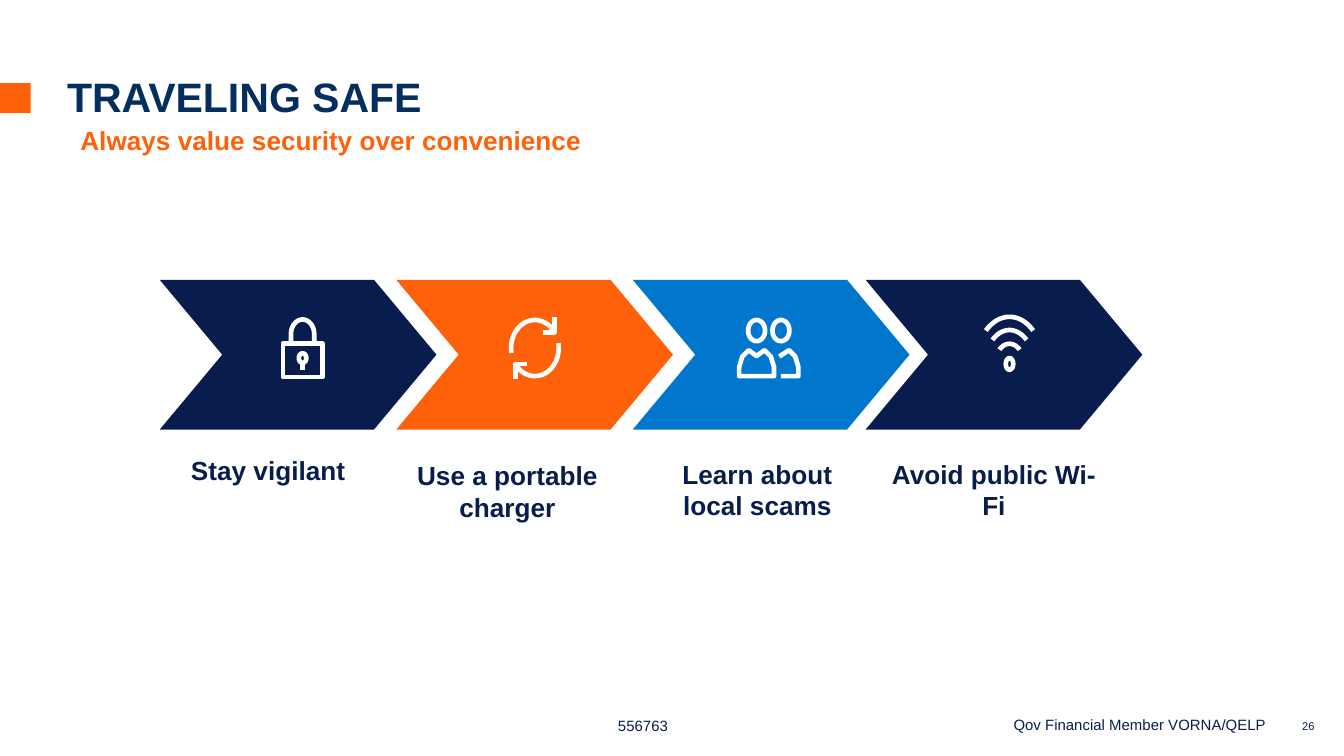
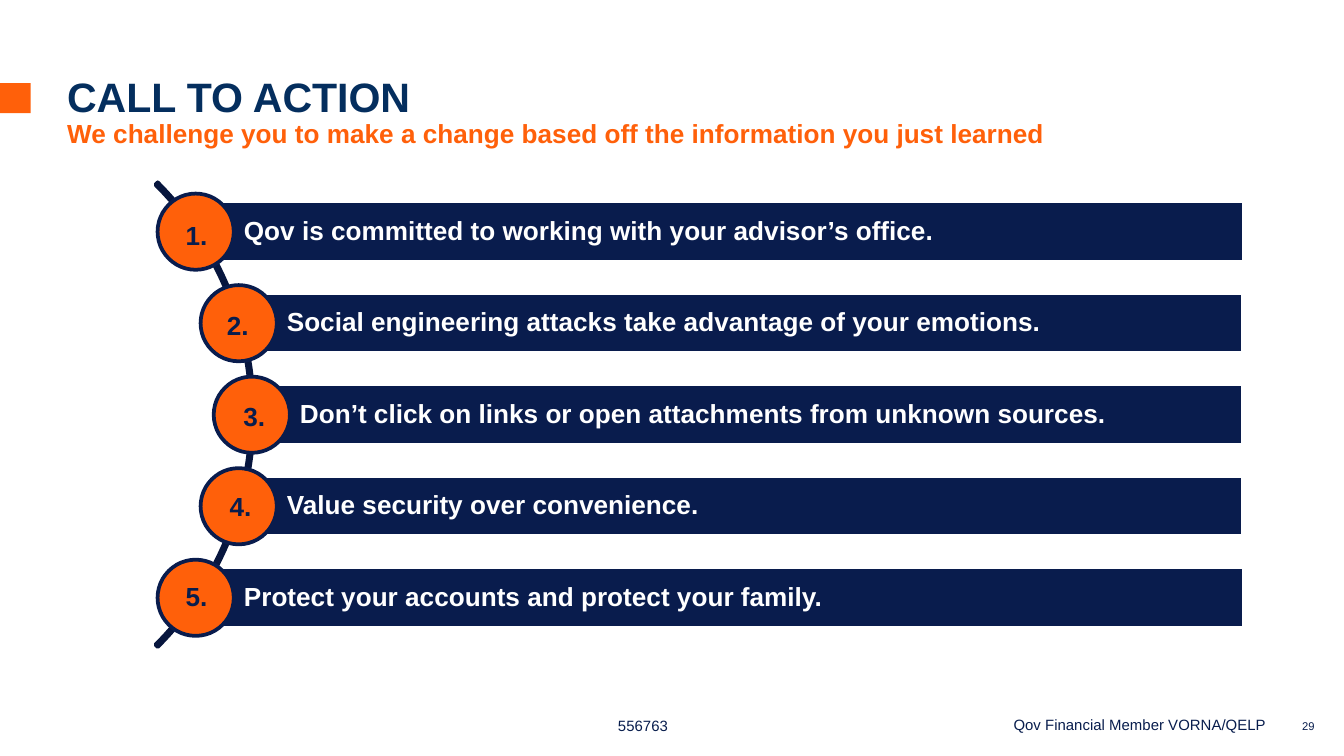
import math

import pptx
import pptx.dml.color
import pptx.enum.shapes
import pptx.enum.text
import pptx.util
from pptx.util import Cm

RGBColor = pptx.dml.color.RGBColor
Shape = pptx.enum.shapes.MSO_SHAPE
Align = pptx.enum.text.PP_ALIGN
Anchor = pptx.enum.text.MSO_ANCHOR

NAVY = RGBColor(0x08, 0x1D, 0x4D)
BAR_NAVY = RGBColor(0x09, 0x1C, 0x4D)
ARC_NAVY = RGBColor(0x07, 0x16, 0x3E)
TITLE_NAVY = RGBColor(0x04, 0x2E, 0x5E)
ORANGE = RGBColor(0xFF, 0x60, 0x0A)
BLUE = RGBColor(0x00, 0x77, 0xCD)
WHITE = RGBColor(0xFF, 0xFF, 0xFF)
FONT = "Arial"


def write_text(shape, text, size=14, color=NAVY, bold=True, align=Align.LEFT,
               anchor=Anchor.TOP, insets=(0, 0, 0, 0), line_spacing=None):
    """Fill a shape with one paragraph; insets are left, top, right, bottom in cm."""
    frame = shape.text_frame
    frame.word_wrap = True
    frame.vertical_anchor = anchor
    (frame.margin_left, frame.margin_top,
     frame.margin_right, frame.margin_bottom) = map(Cm, insets)
    paragraph = frame.paragraphs[0]
    paragraph.alignment = align
    paragraph.line_spacing = line_spacing
    run = paragraph.add_run()
    run.text = text
    run.font.name = FONT
    run.font.size = pptx.util.Pt(size)
    run.font.bold = bold
    run.font.color.rgb = color


def arc(center_x, center_y, radius_x, radius_y, start=0, end=360):
    """Points along an ellipse; degrees run clockwise from the right."""
    steps = 32
    angles = [math.radians(start + (end - start) * i / steps) for i in range(steps + 1)]
    return [(center_x + radius_x * math.cos(a), center_y + radius_y * math.sin(a))
            for a in angles]


def lock_icon():
    return [
        [(-0.37, -0.09), (0.37, -0.09), (0.37, 0.55), (-0.37, 0.55), (-0.37, -0.09)],
        [(-0.22, -0.09), *arc(0, -0.26, 0.22, 0.28, 180, 360), (0.22, -0.09)],
        arc(0, 0.19, 0.07, 0.09),
        [(0, 0.28), (0, 0.41)],
    ]


def cycle_icon():
    upper = [arc(0, 0, 0.45, 0.53, 170, 320),
             [(0.15, -0.3), (0.37, -0.3), (0.37, -0.58)]]
    lower = [[(-x, -y) for x, y in stroke] for stroke in upper]
    return upper + lower


def people_icon():
    heads = [arc(x, -0.33, 0.16, 0.2) for x in (-0.23, 0.23)]
    front = [(-0.56, 0.53), (-0.56, 0.36), (-0.5, 0.16), (-0.38, 0.04), (-0.23, 0.15),
             (-0.08, 0.04), (0.04, 0.16), (0.1, 0.36), (0.1, 0.53), (-0.56, 0.53)]
    back = [(0.23, 0.53), (0.56, 0.53), (0.56, 0.36), (0.5, 0.16), (0.38, 0.04),
            (0.2, 0.16)]
    return heads + [front, back]


def wifi_icon():
    waves = [arc(0, 0, 0.71 * height, height, 225, 315) for height in (0.38, 0.64, 0.89)]
    return waves + [arc(0, 0, 0.07, 0.11)]


class Deck:
    """Holds the shared style and the slide being built; all lengths are in cm."""

    def __init__(self):
        self.presentation = pptx.Presentation()
        self.presentation.slide_width = Cm(25.4)
        self.presentation.slide_height = Cm(14.29)
        self.slide = None

    def add_slide(self, title, subtitle, subtitle_left, subtitle_top, number):
        self.slide = self.presentation.slides.add_slide(
            self.presentation.slide_layouts[6])
        self.shape(Shape.RECTANGLE, 0, 1.57, 0.58, 0.57, fill=ORANGE)
        self.text(title, 1.27, 1.27, 22.35, 1.02, size=22, color=TITLE_NAVY,
                  anchor=Anchor.BOTTOM, line_spacing=0.9)
        self.text(subtitle, subtitle_left, subtitle_top, 22.1, 0.8, color=ORANGE,
                  line_spacing=pptx.util.Pt(22))
        footer = dict(bold=False, anchor=Anchor.BOTTOM)
        self.text("556763", 11.68, 12.8, 7.34, 1.09, size=8, **footer)
        self.text("Qov Financial Member VORNA/QELP", 15.32, 13.54, 8.61, 0.33,
                  size=8, align=Align.RIGHT, **footer)
        self.text(str(number), 24.61, 13.61, 0.48, 0.25, size=6, **footer)

    def text(self, text, left, top, width, height, **style):
        box = self.slide.shapes.add_textbox(Cm(left), Cm(top), Cm(width), Cm(height))
        write_text(box, text, **style)

    def paint(self, shape, fill=None, line=None, line_width=2):
        shape.shadow.inherit = False
        if fill is None:
            shape.fill.background()
        else:
            shape.fill.solid()
            shape.fill.fore_color.rgb = fill
        if line is None:
            shape.line.fill.background()
        else:
            shape.line.color.rgb = line
            shape.line.width = pptx.util.Pt(line_width)

    def shape(self, kind, left, top, width, height, adjustments=(), **paint):
        shape = self.slide.shapes.add_shape(
            kind, Cm(left), Cm(top), Cm(width), Cm(height))
        for index, value in enumerate(adjustments):
            shape.adjustments[index] = value
        self.paint(shape, **paint)
        return shape

    def icon(self, strokes, center_x, center_y):
        """Draw polylines, given around the icon's centre, as one white outline."""
        placed = [[(Cm(center_x + x), Cm(center_y + y)) for x, y in stroke]
                  for stroke in strokes]
        builder = self.slide.shapes.build_freeform(*placed[0][0])
        for stroke in placed:
            builder.move_to(*stroke[0])
            builder.add_line_segments(stroke[1:], close=stroke[0] == stroke[-1])
        self.paint(builder.convert_to_shape(), line=WHITE, line_width=2.5)


def build_traveling_safe(deck):
    deck.add_slide("TRAVELING SAFE", "Always value security over convenience",
                   1.52, 2.16, 26)
    chevrons = [(3.02, NAVY), (7.49, ORANGE), (11.96, BLUE), (16.36, NAVY)]
    for left, color in chevrons:
        deck.shape(Shape.CHEVRON, left, 5.29, 5.23, 2.83, [0.417], fill=color)

    deck.icon(lock_icon(), 5.72, 6.58)
    deck.icon(cycle_icon(), 10.11, 6.58)
    deck.icon(people_icon(), 14.53, 6.58)
    deck.icon(wifi_icon(), 19.08, 6.88)

    labels = [
        ("Stay vigilant", 3.61, 8.59, 3.89, Align.LEFT),
        ("Use a portable charger", 7.24, 8.69, 4.7, Align.CENTER),
        ("Learn about local scams", 12.37, 8.66, 3.89, Align.CENTER),
        ("Avoid public Wi-Fi", 16.84, 8.66, 3.89, Align.CENTER),
    ]
    for label, left, top, width, align in labels:
        deck.text(label, left, top, width, 1.96, align=align)


def build_call_to_action(deck):
    deck.add_slide(
        "CALL TO ACTION",
        "We challenge you to make a change based off the information you just learned",
        1.27, 2.03, 29)
    arc_x, arc_y, arc_size = -1.41, 7.84, 12.42
    deck.shape(Shape.BLOCK_ARC, arc_x - arc_size / 2, arc_y - arc_size / 2,
               arc_size, arc_size, [189, 27, 0.005], line=ARC_NAVY)

    actions = [
        ("Qov is committed to working with your advisor’s office.", 3.51),
        ("Social engineering attacks take advantage of your emotions.", 4.29),
        ("Don’t click on links or open attachments from unknown sources.", 4.6),
        ("Value security over convenience.", 4.34),
        ("Protect your accounts and protect your family.", 3.51),
    ]
    radius, step, bar_right, bar_height, circle = 6.17, 1.73, 23.5, 1.14, 1.44
    for index, (action, number_left) in enumerate(actions):
        offset = (index - 2) * step
        center_x = arc_x + math.sqrt(radius ** 2 - offset ** 2)
        center_y = arc_y + offset
        bar = deck.shape(Shape.RECTANGLE, center_x, center_y - bar_height / 2,
                         bar_right - center_x, bar_height, fill=BAR_NAVY, line=WHITE)
        write_text(bar, action, color=WHITE, anchor=Anchor.MIDDLE,
                   insets=(0.91, 0.1, 0.1, 0.1), line_spacing=0.9)
        deck.shape(Shape.OVAL, center_x - circle / 2, center_y - circle / 2,
                   circle, circle, fill=ORANGE, line=BAR_NAVY)
        deck.text(f"{index + 1}.", number_left, 4.14 + 1.71 * index, 0.56, 0.61)


def main():
    deck = Deck()
    build_traveling_safe(deck)
    build_call_to_action(deck)
    deck.presentation.save("out.pptx")


if __name__ == "__main__":
    main()
